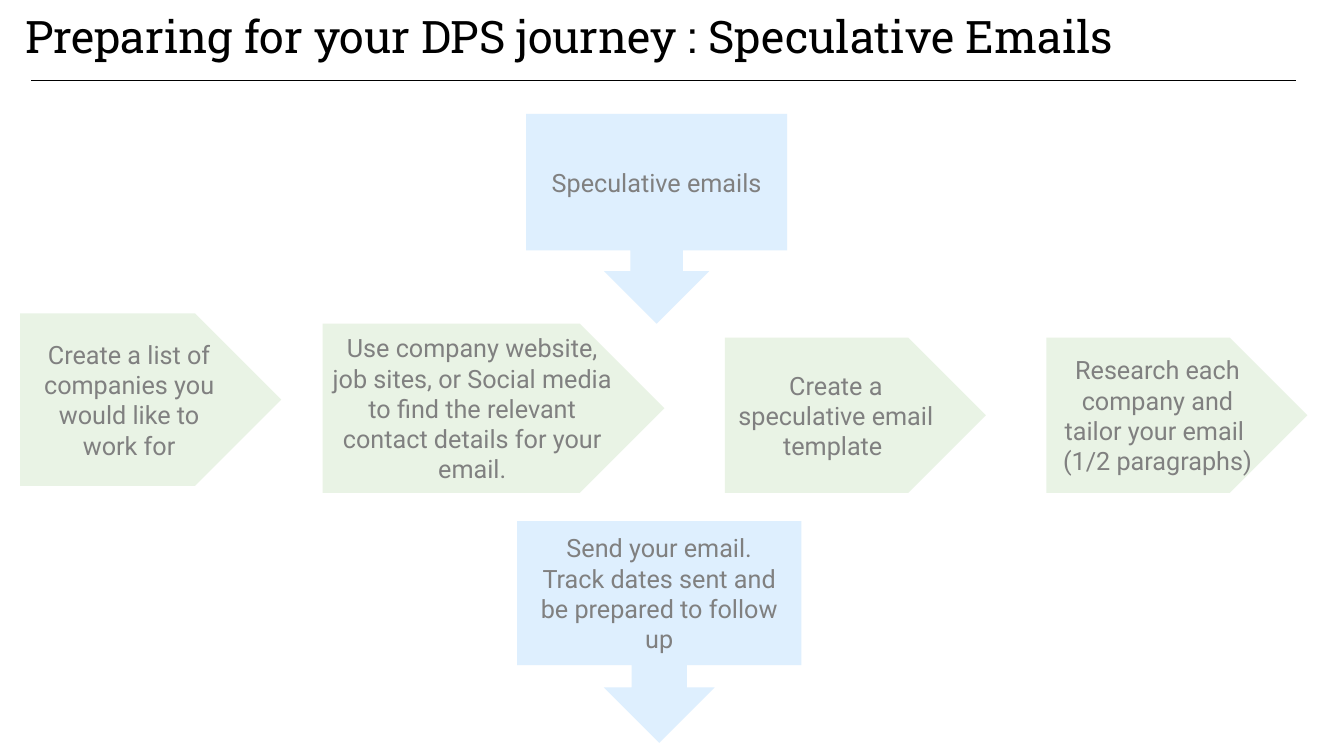
"""Build a slide showing the steps for sending speculative emails."""
import dataclasses

import lxml.etree
import pptx
import pptx.dml.color
import pptx.enum.shapes
import pptx.enum.text
import pptx.oxml.ns
import pptx.slide
import pptx.text.text
import pptx.util

Pt = pptx.util.Pt
Shapes = pptx.enum.shapes.MSO_SHAPE
Anchor = pptx.enum.text.MSO_ANCHOR
Align = pptx.enum.text.PP_ALIGN

BLUE, GREEN, GREY, BLACK = "DEEFFE", "E9F3E5", "808080", "000000"
STEP_WIDTH = 186.5


@dataclasses.dataclass(frozen=True)
class Step:
    kind: Shapes
    fill: str
    left: float
    top: float
    width: float
    height: float
    paragraphs: tuple[str, ...]


STEPS = (
    Step(Shapes.DOWN_ARROW_CALLOUT, BLUE, 375.8, 81.4, STEP_WIDTH, 149.8,
         ("Speculative emails",)),
    Step(Shapes.PENTAGON, GREEN, 14.4, 223.9, STEP_WIDTH, 123.1,
         ("Create a list of companies you would like to work for",)),
    Step(Shapes.PENTAGON, GREEN, 230.4, 231.1, 244.1, 121,
         ("Use company website, job sites, or Social media to find the "
          "relevant contact details for your email.",)),
    Step(Shapes.PENTAGON, GREEN, 517.7, 241.2, STEP_WIDTH, 110.9,
         ("Create a speculative email template ",)),
    Step(Shapes.PENTAGON, GREEN, 747.4, 241.2, STEP_WIDTH, 110.9,
         ("Research each company and tailor your email ", "(1/2 paragraphs)")),
    Step(Shapes.DOWN_ARROW_CALLOUT, BLUE, 369.4, 372.2, 203, 158.4,
         ("Send your email.", "Track dates sent and be prepared to follow up")),
)


def color(value: str) -> pptx.dml.color.RGBColor:
    return pptx.dml.color.RGBColor.from_string(value)


def add_run(paragraph: pptx.text.text._Paragraph, text: str, font: str,
            size: float, fill: str) -> None:
    run = paragraph.add_run()
    run.text = text
    run.font.name = font
    run.font.size = Pt(size)
    run.font.color.rgb = color(fill)


def add_step(slide: pptx.slide.Slide, step: Step) -> None:
    shape = slide.shapes.add_shape(step.kind, Pt(step.left), Pt(step.top),
                                   Pt(step.width), Pt(step.height))
    shape.shadow.inherit = False
    shape.fill.solid()
    shape.fill.fore_color.rgb = color(step.fill)
    shape.line.fill.background()
    frame = shape.text_frame
    frame.word_wrap = True
    frame.vertical_anchor = Anchor.MIDDLE
    for index, text in enumerate(step.paragraphs):
        paragraph = frame.add_paragraph() if index else frame.paragraphs[0]
        paragraph.alignment = Align.CENTER
        add_run(paragraph, text, "Roboto", 18, GREY)


def add_title(slide: pptx.slide.Slide, text: str) -> None:
    box = slide.shapes.add_textbox(Pt(10.8), Pt(10.8), Pt(835.9), Pt(38.2))
    frame = box.text_frame
    frame.word_wrap = True
    frame.vertical_anchor = Anchor.BOTTOM
    paragraph = frame.paragraphs[0]
    paragraph.line_spacing = 0.9
    add_run(paragraph, text, "Roboto Slab", 32, BLACK)


def add_rule(slide: pptx.slide.Slide, left: float, right: float, top: float) -> None:
    connector = slide.shapes.add_connector(
        pptx.enum.shapes.MSO_CONNECTOR.STRAIGHT, Pt(left), Pt(top), Pt(right), Pt(top))
    connector.line.color.rgb = color(BLACK)
    connector.line.width = Pt(1)
    properties = connector._element.spPr
    lxml.etree.SubElement(properties, pptx.oxml.ns.qn("a:effectLst"))


def main() -> None:
    presentation = pptx.Presentation()
    presentation.slide_width = Pt(960)
    presentation.slide_height = Pt(540)
    slide = presentation.slides.add_slide(presentation.slide_layouts[6])
    for step in STEPS:
        add_step(slide, step)
    add_title(slide, "Preparing for your DPS journey : Speculative Emails")
    add_rule(slide, 22.3, 925.9, 57.6)
    presentation.save("out.pptx")


if __name__ == "__main__":
    main()
